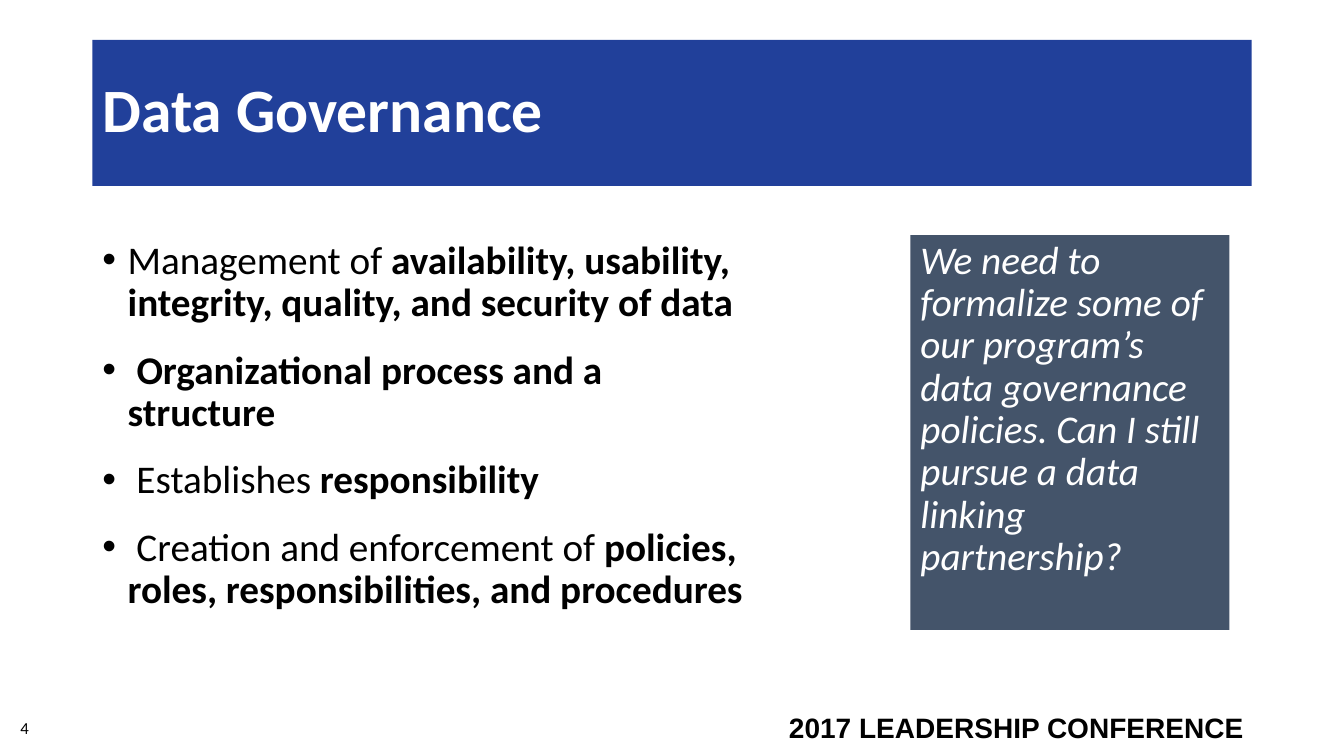
from pptx import Presentation
from pptx.dml.color import RGBColor
from pptx.enum.text import MSO_ANCHOR, MSO_AUTO_SIZE, PP_ALIGN
from pptx.oxml.ns import qn
from pptx.util import Emu, Pt

LEFT, RIGHT = PP_ALIGN.LEFT, PP_ALIGN.RIGHT
TOP, MIDDLE = MSO_ANCHOR.TOP, MSO_ANCHOR.MIDDLE
FIXED = MSO_AUTO_SIZE.NONE
PX = 9525  # EMU per px, 96 px to the inch


class Theme:
    blue, slate = "21409A", "44546A"
    white, black = "FFFFFF", "000000"
    head = {"name": "Calibri", "size": 44, "color": white, "bold": True}
    points = {"name": "Calibri", "size": 28, "color": black, "bold": False}
    quote = {"name": "Calibri", "size": 28, "color": white, "italic": True}
    foot = {"name": "Arial", "size": 20, "color": black, "bold": True}
    page = {"name": "Calibri", "size": 12, "color": black}


class Deck:
    def __init__(self, theme, width, height):
        self.theme = theme
        self.show = Presentation()
        self.show.slide_width = Emu(width * PX)
        self.show.slide_height = Emu(height * PX)
        self.slide = self.show.slides.add_slide(self.show.slide_layouts[3])

    def style(self, font, look):
        for key, value in look.items():
            if key == "color":
                font.color.rgb = RGBColor.from_string(value)
            else:
                setattr(font, key, Pt(value) if key == "size" else value)

    def place(self, shape, box, fill=None, anchor=TOP):
        for key, value in zip(("left", "top", "width", "height"), box):
            setattr(shape, key, Emu(value * PX))
        if fill:
            shape.fill.solid()
            shape.fill.fore_color.rgb = RGBColor.from_string(fill)
        frame = shape.text_frame
        frame.word_wrap = True
        frame.auto_size = FIXED
        frame.vertical_anchor = anchor
        return frame

    def add_text(self, para, runs, look, align=LEFT):
        para.alignment = align
        for text, extra in runs:
            run = para.add_run()
            run.text = text
            self.style(run.font, {**look, **extra})

    def bullet(self, para, mark, indent):
        props = para._p.get_or_add_pPr()
        props.set("marL", str(indent * PX))
        props.set("indent", str(-indent * PX))
        tag = props.makeelement(qn("a:buChar" if mark else "a:buNone"), {})
        if mark:
            tag.set("char", mark)
        props.append(tag)

    def title(self, text, box):
        frame = self.place(self.slide.shapes.title, box, self.theme.blue, MIDDLE)
        para = frame.paragraphs[0]
        self.add_text(para, [(text, {})], self.theme.head)
        para.line_spacing = 0.9

    def body(self, index, items, box, look, mark=None, indent=0, fill=None):
        frame = self.place(self.slide.placeholders[index], box, fill)
        for n, runs in enumerate(items):
            para = frame.add_paragraph() if n else frame.paragraphs[0]
            self.bullet(para, mark, indent)
            para.line_spacing = 0.9
            para.space_before = Pt(6 if n else 0)
            para.space_after = Pt(12 if mark else 0)
            self.add_text(para, runs, look)

    def label(self, text, box, look, align=LEFT, anchor=TOP):
        shape = self.slide.shapes.add_textbox(0, 0, 0, 0)
        frame = self.place(shape, box, anchor=anchor)
        self.add_text(frame.paragraphs[0], [(text, {})], look, align)


def main():
    theme = Theme()
    deck = Deck(theme, 1280, 720)
    bold = {"bold": True}

    # Footer
    deck.label("2017 LEADERSHIP CONFERENCE", (722, 672, 472, 40), theme.foot, RIGHT)
    deck.label("4", (10, 674, 288, 38), theme.page, anchor=MIDDLE)

    # Title band
    deck.title("Data Governance", (88, 38, 1104, 139))

    # Main points
    points = [
        [("Management of ", {}),
         ("availability, usability, integrity, quality, and security of data", bold)],
        [(" ", {}), ("Organizational process and a structure", bold)],
        [(" Establishes ", {}), ("responsibility", bold)],
        [(" Creation and enforcement of ", {}),
         ("policies, roles, responsibilities, and procedures", bold)],
    ]
    deck.body(1, points, (88, 224, 640, 400), theme.points, "•", 24)

    # Question panel
    ask = ("We need to formalize some of our program’s data governance policies. "
           "Can I still pursue a data linking partnership?")
    deck.body(2, [[(ask, {})]], (867, 224, 304, 376), theme.quote, fill=theme.slate)

    deck.show.save("out.pptx")


if __name__ == "__main__":
    main()
